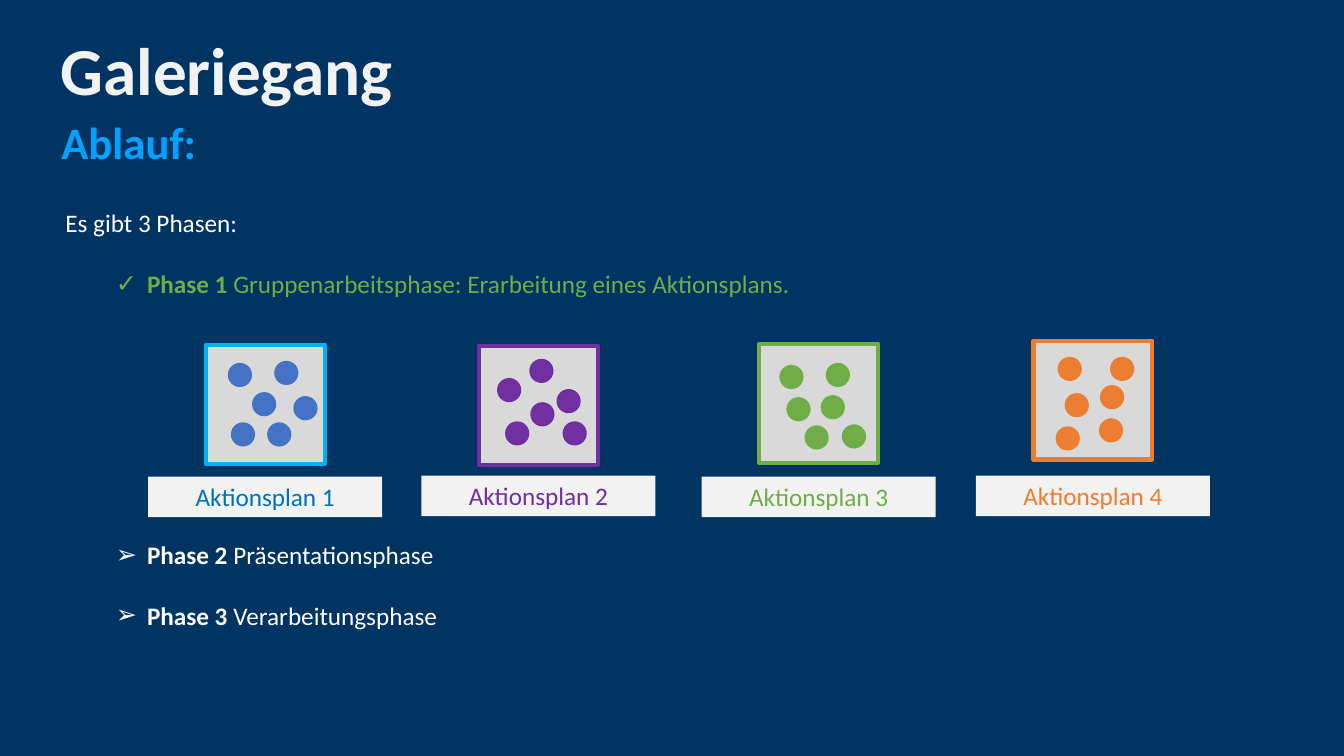
from lxml.etree import SubElement
from pptx import Presentation
from pptx.dml.color import RGBColor
from pptx.enum.shapes import MSO_SHAPE as Shape
from pptx.enum.text import MSO_ANCHOR as Anchor, PP_ALIGN as Align
from pptx.oxml.ns import qn
from pptx.util import Inches, Pt

NAVY = RGBColor(0x00, 0x34, 0x62)
WHITE = RGBColor(0xFF, 0xFF, 0xFF)
OFF_WHITE = RGBColor(0xF2, 0xF2, 0xF2)
GREY = RGBColor(0xD9, 0xD9, 0xD9)
SKY = RGBColor(0x01, 0xA2, 0xFF)
CYAN = RGBColor(0x00, 0xB0, 0xF0)
DOT_BLUE = RGBColor(0x44, 0x72, 0xC4)
TEXT_BLUE = RGBColor(0x00, 0x70, 0xC0)
PURPLE = RGBColor(0x70, 0x30, 0xA0)
GREEN = RGBColor(0x70, 0xAD, 0x47)
ORANGE = RGBColor(0xED, 0x7D, 0x31)

TITLE = "Galeriegang"
SUBTITLE = "Ablauf:"
INTRO = "Es gibt 3 Phasen:"
# bullet, name, description, colour, space before in points
PHASES = [
    ("✓", "Phase 1 ", "Gruppenarbeitsphase: Erarbeitung eines Aktionsplans.", GREEN, 22),
    ("➢", "Phase 2 ", "Präsentationsphase", WHITE, 172),
    ("➢", "Phase 3 ", "Verarbeitungsphase", WHITE, 21.5),
]
# label, board left and top, label top, colours of frame, dots and label,
# dot offsets within the board
PLANS = [
    ("Aktionsplan 1", 2.04, 3.42, 4.73, CYAN, DOT_BLUE, TEXT_BLUE,
     [(.68, .16), (.87, .51), (.22, .18), (.46, .47), (.25, .77), (.61, .77)]),
    ("Aktionsplan 2", 4.75, 3.43, 4.72, PURPLE, PURPLE, PURPLE,
     [(.50, .13), (.83, .75), (.18, .32), (.51, .56), (.26, .75), (.77, .43)]),
    ("Aktionsplan 3", 7.53, 3.41, 4.73, GREEN, GREEN, GREEN,
     [(.66, .19), (.82, .80), (.20, .21), (.61, .51), (.45, .81), (.27, .53)]),
    ("Aktionsplan 4", 10.25, 3.38, 4.72, ORANGE, ORANGE, ORANGE,
     [(.24, .16), (.31, .52), (.76, .16), (.66, .44), (.65, .77), (.22, .85)]),
]
BOARD = 1.18
DOT = 0.24
LABEL_WIDTH, LABEL_HEIGHT = 2.32, 0.4


def write(para, text, size=18, color=WHITE, bold=False):
    span = para.add_run()
    span.text = text
    font = span.font
    font.name, font.size, font.bold = "Calibri", Pt(size), bold
    font.color.rgb = color


def add_text_box(page, left, top, width, height):
    box = page.shapes.add_textbox(Inches(left), Inches(top), Inches(width), Inches(height))
    box.text_frame.word_wrap = True
    return box.text_frame


def add_figure(page, kind, left, top, width, height, fill, line=None):
    figure = page.shapes.add_shape(
        kind, Inches(left), Inches(top), Inches(width), Inches(height))
    figure.shadow.inherit = False
    figure.fill.solid()
    figure.fill.fore_color.rgb = fill
    if line is None:
        figure.line.fill.background()
    else:
        figure.line.color.rgb = line
        figure.line.width = Pt(3)
    return figure


def set_bullet(para, char):
    props = para._p.get_or_add_pPr()
    props.set("marL", str(Inches(0.81)))
    props.set("indent", str(Inches(-0.31)))
    SubElement(props, qn("a:buFont"), typeface="Arial")
    SubElement(props, qn("a:buChar"), char=char)


def add_headings(page):
    title = page.shapes.title
    title.left, title.top = Inches(0.23), Inches(-0.16)
    title.width, title.height = Inches(4.04), Inches(1.3)
    title.text_frame.vertical_anchor = Anchor.BOTTOM
    para = title.text_frame.paragraphs[0]
    para.alignment, para.line_spacing = Align.CENTER, 0.9
    write(para, TITLE, size=48, color=OFF_WHITE, bold=True)

    para = add_text_box(page, 0.51, 1.19, 2.73, 0.57).paragraphs[0]
    para.line_spacing = 0.8
    write(para, SUBTITLE, size=32, color=SKY, bold=True)


def add_phases(page):
    frame = add_text_box(page, 0.55, 2.01, 11.92, 4.34)
    write(frame.paragraphs[0], INTRO)
    for bullet, name, description, color, gap in PHASES:
        para = frame.add_paragraph()
        para.level = 1
        para.space_before = Pt(gap)
        set_bullet(para, bullet)
        write(para, name, color=color, bold=True)
        write(para, description, color=color)


def add_plan(page, label, left, top, label_top, frame_color, dot_color, text_color, dots):
    add_figure(page, Shape.RECTANGLE, left, top, BOARD, BOARD, GREY, frame_color)
    for across, down in dots:
        add_figure(page, Shape.OVAL, left + across, top + down, DOT, DOT, dot_color)
    label_left = left + (BOARD - LABEL_WIDTH) / 2
    plate = add_figure(page, Shape.RECTANGLE, label_left, label_top,
                       LABEL_WIDTH, LABEL_HEIGHT, OFF_WHITE)
    plate.text_frame.vertical_anchor = Anchor.MIDDLE
    para = plate.text_frame.paragraphs[0]
    para.alignment = Align.CENTER
    write(para, label, color=text_color)


def main():
    deck = Presentation()
    deck.slide_width, deck.slide_height = Inches(13.33), Inches(7.5)
    page = deck.slides.add_slide(deck.slide_layouts[5])
    page.background.fill.solid()
    page.background.fill.fore_color.rgb = NAVY
    add_headings(page)
    add_phases(page)
    for plan in PLANS:
        add_plan(page, *plan)
    deck.save("out.pptx")


if __name__ == "__main__":
    main()
